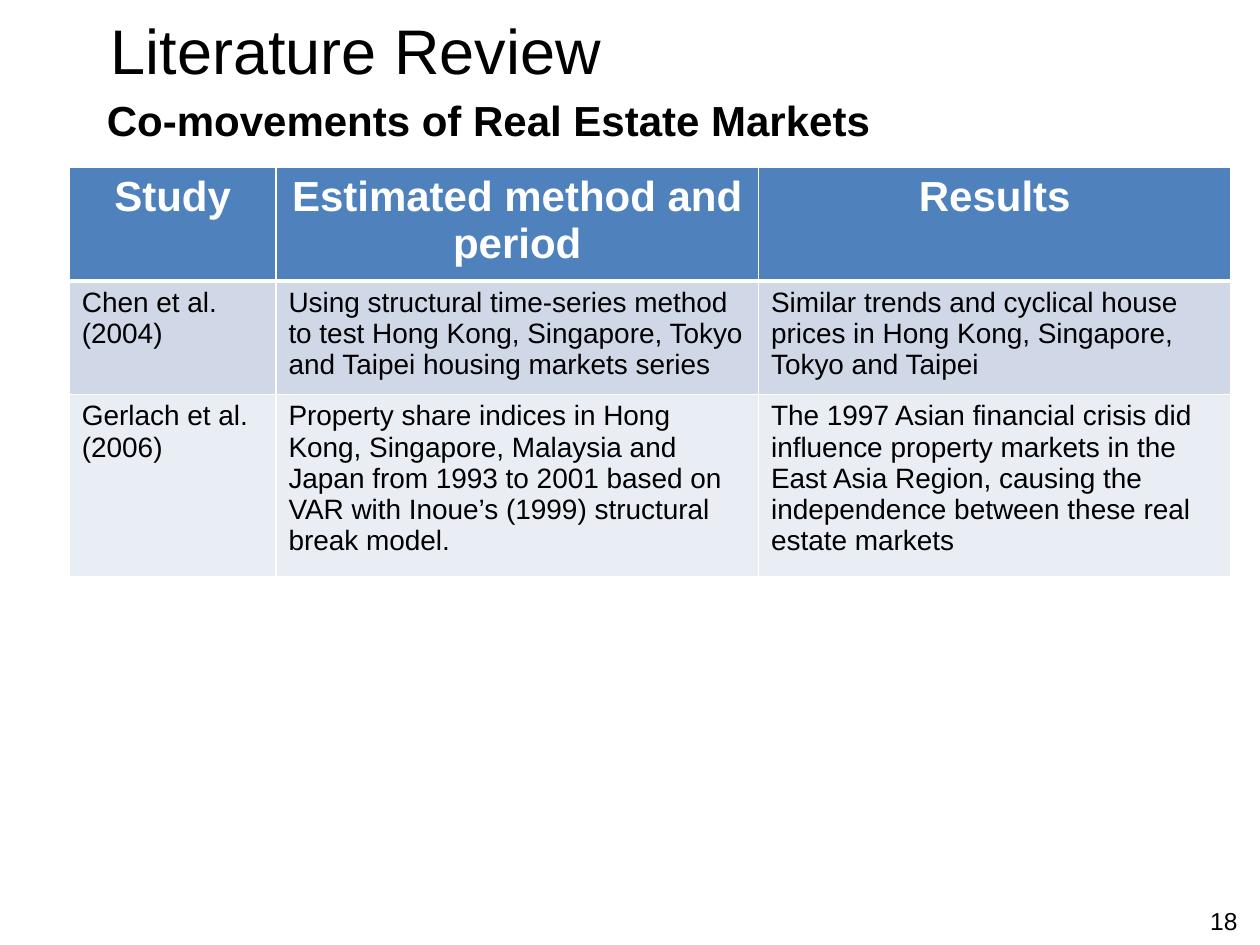
from dataclasses import dataclass

from lxml import etree
from pptx import Presentation
from pptx.dml.color import RGBColor
from pptx.enum.text import MSO_ANCHOR, PP_ALIGN
from pptx.oxml.ns import qn
from pptx.util import Inches, Pt

LEFT, MID, RIGHT = PP_ALIGN.LEFT, PP_ALIGN.CENTER, PP_ALIGN.RIGHT
TOP, CENTER = MSO_ANCHOR.TOP, MSO_ANCHOR.MIDDLE

COLS = [1.64, 3.83, 3.75]
ROWS = [0.82, 0.85, 1.45]
STUDIES = [
    ["Study", "Estimated method and period", "Results"],
    [
        "Chen et al. (2004)",
        "Using structural time-series method to test Hong Kong, Singapore, "
        "Tokyo and Taipei housing markets series",
        "Similar trends and cyclical house prices in Hong Kong, Singapore, "
        "Tokyo and Taipei",
    ],
    [
        "Gerlach et al. (2006)",
        "Property share indices in Hong Kong, Singapore, Malaysia and Japan "
        "from 1993 to 2001 based on VAR with Inoue’s (1999) structural break model.",
        "The 1997 Asian financial crisis did influence property markets in the "
        "East Asia Region, causing the independence between these real estate markets",
    ],
]


@dataclass(frozen=True)
class Theme:
    font: str = "Arial"
    ink: str = "000000"
    paper: str = "FFFFFF"
    head: str = "4F81BD"
    bands: tuple = ("D0D8E8", "E9EDF4")
    title: int = 36
    lead: int = 24
    body: int = 16
    page: int = 14
    thin: int = 1
    thick: int = 3


class Deck:
    """Holds the theme and the current slide, and adds elements to it."""

    def __init__(self, theme):
        self.theme = theme
        self.show = Presentation()
        self.show.slide_width, self.show.slide_height = Inches(10), Inches(7.5)
        self.slide = self.show.slides.add_slide(self.show.slide_layouts[5])

    def label(self, frame, text, size, bold=False, align=LEFT, color=None):
        frame.word_wrap = True
        para = frame.paragraphs[0]
        para.text, para.alignment = text, align
        style = {"name": self.theme.font, "size": Pt(size), "bold": bold}
        for name, value in style.items():
            setattr(para.font, name, value)
        para.font.color.rgb = RGBColor.from_string(color or self.theme.ink)

    def title(self, text, box):
        shape = self.slide.shapes.title
        for name, value in zip(("left", "top", "width", "height"), box):
            setattr(shape, name, Inches(value))
        self.label(shape.text_frame, text, self.theme.title)
        shape.text_frame.vertical_anchor = CENTER

    def text(self, text, box, size, **style):
        shape = self.slide.shapes.add_textbox(*map(Inches, box))
        self.label(shape.text_frame, text, size, **style)
        shape.text_frame.vertical_anchor = TOP

    def edge(self, cell, side, width):
        props = cell._tc.get_or_add_tcPr()
        line = etree.SubElement(props, qn(f"a:ln{side}"), w=str(Pt(width)))
        fill = etree.SubElement(line, qn("a:solidFill"))
        etree.SubElement(fill, qn("a:srgbClr"), val=self.theme.paper)

    def cell(self, cell, text, row):
        theme = self.theme
        widths = dict.fromkeys("LRTB", theme.thin)
        if row == 0:
            fill = theme.head
            style = {"size": theme.lead, "bold": True, "align": MID, "color": theme.paper}
            widths["B"] = theme.thick
        else:
            fill = theme.bands[(row - 1) % 2]
            style = {"size": theme.body}
            if row == 1:
                widths["T"] = theme.thick
        for side, width in widths.items():
            self.edge(cell, side, width)
        cell.fill.solid()
        cell.fill.fore_color.rgb = RGBColor.from_string(fill)
        self.label(cell.text_frame, text, **style)

    def table(self, data, left, top, cols, rows):
        box = map(Inches, (left, top, sum(cols), sum(rows)))
        table = self.slide.shapes.add_table(len(rows), len(cols), *box).table
        for col, width in zip(table.columns, cols):
            col.width = Inches(width)
        for row, height in zip(table.rows, rows):
            row.height = Inches(height)
        for i, line in enumerate(data):
            for j, text in enumerate(line):
                self.cell(table.cell(i, j), text, i)


def main():
    theme = Theme()
    deck = Deck(theme)
    deck.title("Literature Review", (0.78, 0, 8.5, 0.78))
    deck.text("Co-movements of Real Estate Markets", (0.75, 0.7, 8.5, 0.47),
              theme.lead, bold=True)
    deck.text("18", (7.84, 7.14, 2.08, 0.32), theme.page, align=RIGHT)
    deck.table(STUDIES, 0.55, 1.33, COLS, ROWS)
    deck.show.save("out.pptx")


if __name__ == "__main__":
    main()
